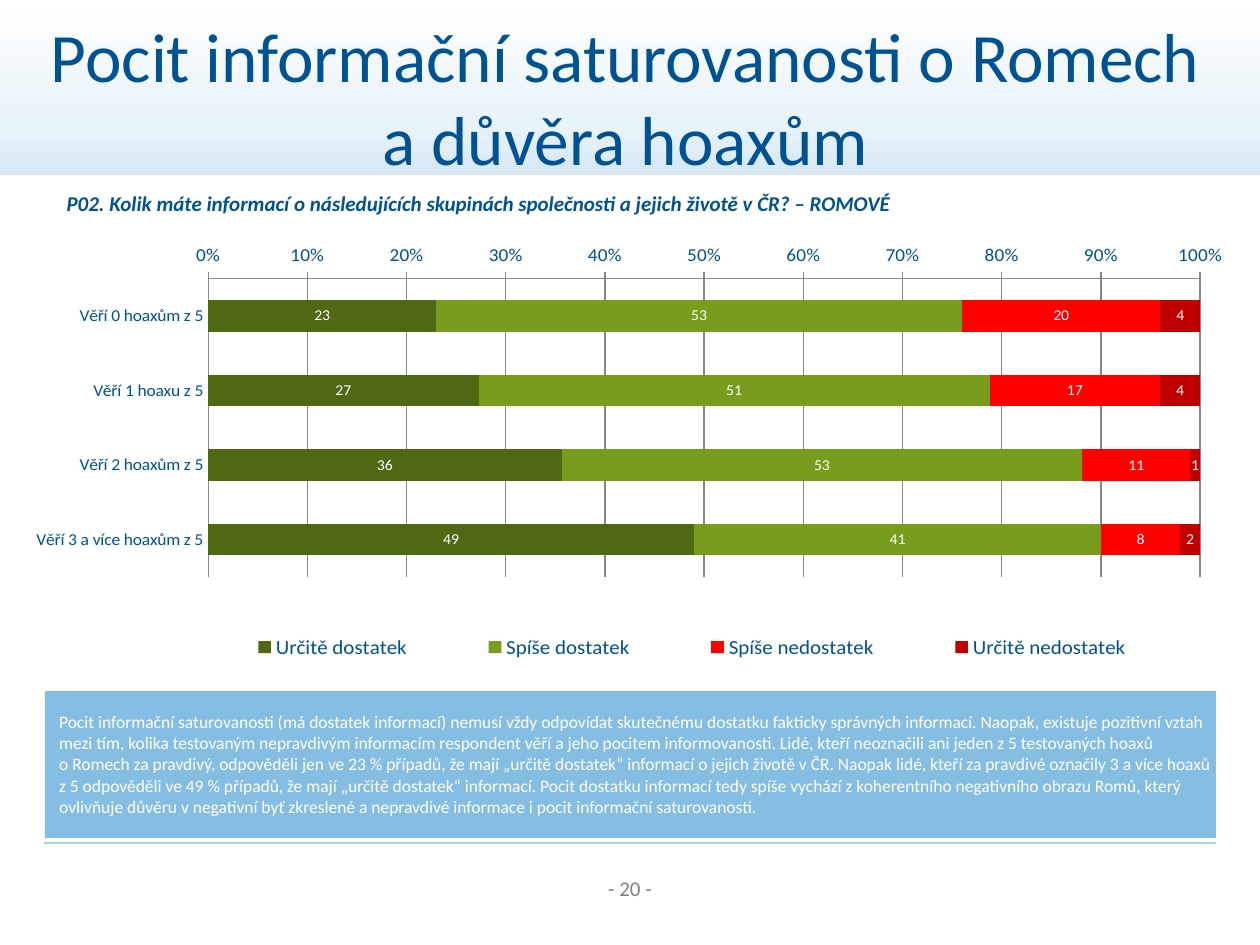
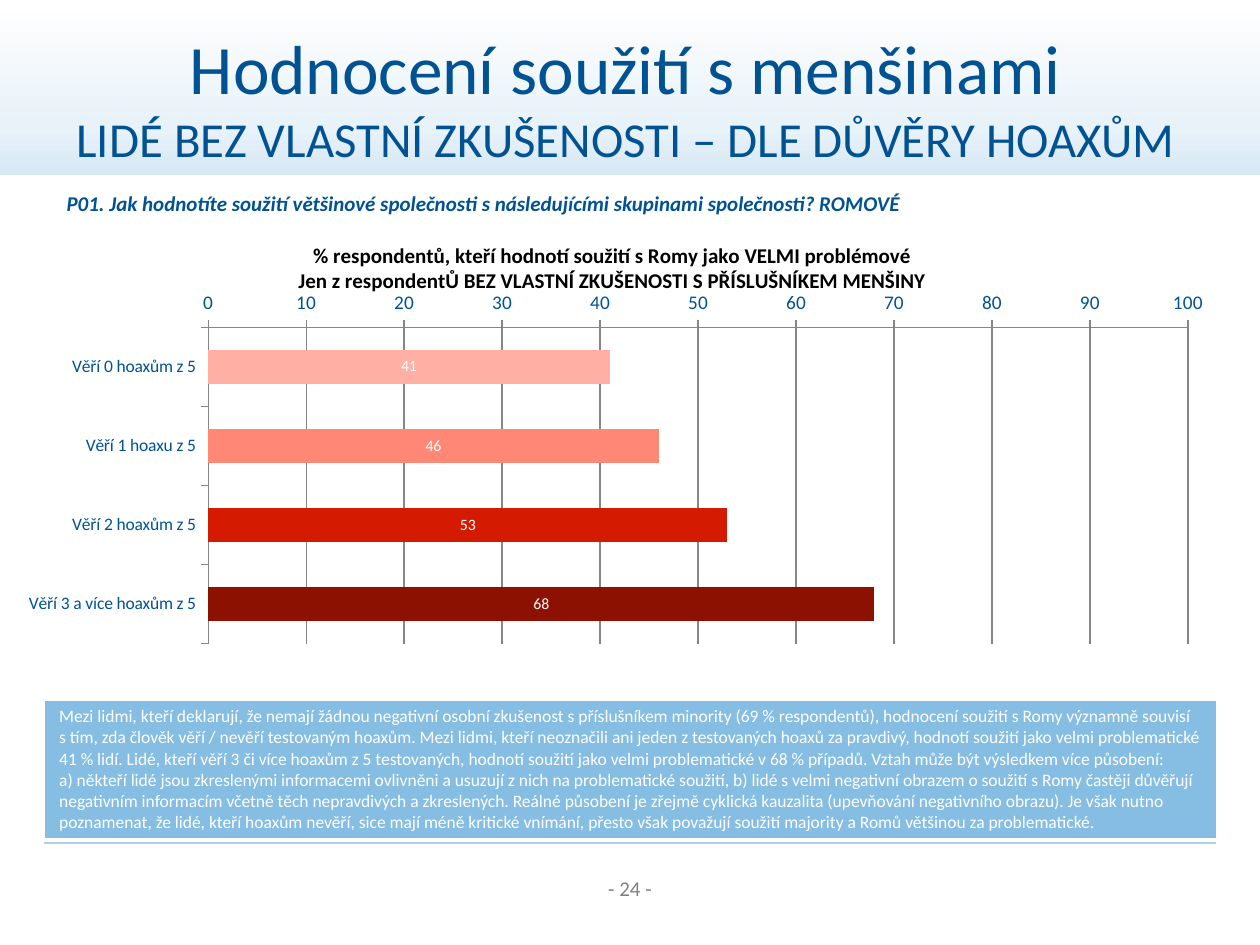
from copy import deepcopy
from dataclasses import dataclass

from pptx import Presentation
from pptx.chart.chart import Chart
from pptx.chart.data import CategoryChartData
from pptx.dml.color import RGBColor
from pptx.enum.chart import (
    XL_AXIS_CROSSES as Crosses,
    XL_CHART_TYPE as ChartType,
    XL_LABEL_POSITION as LabelPosition,
    XL_LEGEND_POSITION as LegendPosition,
    XL_TICK_MARK as TickMark,
)
from pptx.enum.shapes import MSO_CONNECTOR as Connector, MSO_SHAPE as Shape
from pptx.enum.text import MSO_ANCHOR as Anchor, MSO_AUTO_SIZE as AutoSize, PP_ALIGN as Align
from pptx.oxml import parse_xml
from pptx.oxml.ns import nsdecls, qn
from pptx.slide import Slide
from pptx.util import Inches, Pt

# Shared style
FONT = "Calibri"
BLUE, WHITE, BLACK, GREY = "005293", "FFFFFF", "000000", "808080"
NOTE_FILL, RULE, GRID = "86BDE2", "AFCFEA", "868686"
BAND_STOPS = [(0, "FFFFFF"), (0.73, "E8F2F9"), (1, "D7E7F4")]
BELIEF_LEVELS = ["Věří 0 hoaxům z 5", "Věří 1 hoaxu z 5", "Věří 2 hoaxům z 5", "Věří 3 a více hoaxům z 5"]


@dataclass
class Line:
    text: str
    size: float = 39.6


@dataclass
class Answer:
    name: str
    values: list[int]
    color: str


@dataclass
class BarChart:
    kind: ChartType
    top: float
    height: float
    plot_area: tuple[float, float, float, float]
    answers: list[Answer]
    category_tick: TickMark
    axis_format: str
    axis_step: float
    axis_max: float | None = None
    title: str = ""
    legend_area: tuple[float, float, float, float] | None = None
    point_colors: tuple[str, ...] = ()


@dataclass
class Page:
    number: int
    title: list[Line]
    question: str
    chart: BarChart
    note: list[str]
    note_top: float


PAGES = [
    Page(
        20,
        [Line("Pocit informační saturovanosti o Romech a důvěra hoaxům")],
        "P02. Kolik máte informací o následujících skupinách společnosti a jejich životě v ČR? – ROMOVÉ",
        BarChart(
            ChartType.BAR_STACKED_100, 1.94, 3.46, (0.17, 0.03, 0.81, 0.72),
            [
                Answer("Určitě dostatek", [23, 27, 36, 49], "506814"),
                Answer("Spíše dostatek", [53, 51, 53, 41], "789D1D"),
                Answer("Spíše nedostatek", [20, 17, 11, 8], "FF0000"),
                Answer("Určitě nedostatek", [4, 4, 1, 2], "C00000"),
            ],
            TickMark.NONE, "0%", 0.1, legend_area=(0.15, 0.87, 0.83, 0.1),
        ),
        [
            "Pocit informační saturovanosti (má dostatek informací) nemusí vždy odpovídat skutečnému dostatku "
            "fakticky správných informací. Naopak, existuje pozitivní vztah mezi tím, kolika testovaným "
            "nepravdivým informacím respondent věří a jeho pocitem informovanosti. Lidé, kteří neoznačili ani "
            "jeden z 5 testovaných hoaxů",
            "o Romech za pravdivý, odpověděli jen ve 23 % případů, že mají „určitě dostatek“ informací o jejich "
            "životě v ČR. Naopak lidé, kteří za pravdivé označily 3 a více hoaxů z 5 odpověděli ve 49 % případů, "
            "že mají „určitě dostatek“ informací. Pocit dostatku informací tedy spíše vychází z koherentního "
            "negativního obrazu Romů, který ovlivňuje důvěru v negativní byť zkreslené a nepravdivé informace "
            "i pocit informační saturovanosti.",
        ],
        5.48,
    ),
    Page(
        24,
        [Line("Hodnocení soužití s menšinami"), Line("LIDÉ BEZ VLASTNÍ ZKUŠENOSTI – DLE DŮVĚRY HOAXŮM", 27.9)],
        "P01. Jak hodnotíte soužití většinové společnosti s následujícími skupinami společnosti? ROMOVÉ",
        BarChart(
            ChartType.BAR_CLUSTERED, 1.76, 3.64, (0.17, 0.23, 0.8, 0.69),
            [Answer("Velmi problémové", [41, 46, 53, 68], "506814")],
            TickMark.OUTSIDE, "0", 10, axis_max=100,
            title="% respondentů, kteří hodnotí soužití s Romy jako VELMI problémové\n"
            "Jen z respondentŮ BEZ VLASTNÍ ZKUŠENOSTI S PŘÍSLUŠNÍKEM MENŠINY",
            point_colors=("FFAFA4", "FF8776", "D41A00", "8D1100"),
        ),
        [
            "Mezi lidmi, kteří deklarují, že nemají žádnou negativní osobní zkušenost s příslušníkem minority "
            "(69 % respondentů), hodnocení soužití s Romy významně souvisí",
            "s tím, zda člověk věří / nevěří testovaným hoaxům. Mezi lidmi, kteří neoznačili ani jeden "
            "z testovaných hoaxů za pravdivý, hodnotí soužití jako velmi problematické 41 % lidí. Lidé, kteří "
            "věří 3 či více hoaxům z 5 testovaných, hodnotí soužití jako velmi problematické v 68 % případů. "
            "Vztah může být výsledkem více působení:",
            "a) někteří lidé jsou zkreslenými informacemi ovlivněni a usuzují z nich na problematické soužití, "
            "b) lidé s velmi negativní obrazem o soužití s Romy častěji důvěřují negativním informacím včetně "
            "těch nepravdivých a zkreslených. Reálné působení je zřejmě cyklická kauzalita (upevňování "
            "negativního obrazu). Je však nutno poznamenat, že lidé, kteří hoaxům nevěří, sice mají méně "
            "kritické vnímání, přesto však považují soužití majority a Romů většinou za problematické.",
        ],
        5.56,
    ),
]


def rgb(color: str) -> RGBColor:
    return RGBColor.from_string(color)


def format_font(font, size: float, color: str, bold: bool = False, italic: bool = False) -> None:
    font.name, font.size, font.bold, font.italic = FONT, Pt(size), bold, italic
    font.color.rgb = rgb(color)


def write_text(para, text: str, align: Align = Align.LEFT, **style) -> None:
    """Fill a paragraph; a newline becomes a line break of the same size."""
    para.alignment = align
    span = None
    for part in text.split("\n"):
        if span is not None:
            para._p.add_br().append(deepcopy(span._r.rPr))
        span = para.add_run()
        span.text = part
        format_font(span.font, **style)


def add_text_box(slide: Slide, left: float, top: float, width: float, text: str, **style) -> None:
    box = slide.shapes.add_textbox(Inches(left), Inches(top), Inches(width), Inches(0.3))
    box.text_frame.word_wrap = True
    write_text(box.text_frame.paragraphs[0], text, **style)


# Band, footer rule and page number
def add_frame(slide: Slide, number: int) -> None:
    band = slide.shapes.add_shape(Shape.RECTANGLE, 0, 0, Inches(10), Inches(1.39))
    band.shadow.inherit = False
    band.line.fill.background()
    band.fill.gradient()
    band.fill.gradient_angle = 270
    last_stop = band._element.spPr.findall(".//" + qn("a:gs"))[-1]
    last_stop.addnext(deepcopy(last_stop))
    for stop, (position, color) in zip(band.fill.gradient_stops, BAND_STOPS):
        stop.position = position
        stop.color.rgb = rgb(color)

    rule = slide.shapes.add_connector(Connector.STRAIGHT, Inches(0.35), Inches(6.69), Inches(9.65), Inches(6.69))
    rule.line.color.rgb = rgb(RULE)
    rule.line.width = Pt(0.75)
    rule._element.spPr.append(parse_xml(f"<a:effectLst {nsdecls('a')}/>"))
    add_text_box(slide, 4.37, 6.9, 1.26, f"- {number} -", align=Align.CENTER, size=12, color=GREY)


def add_title(slide: Slide, lines: list[Line]) -> None:
    title = slide.shapes.title
    slide.shapes._spTree.append(title._element)  # bring in front of the band
    title.left, title.top, title.width, title.height = map(Inches, (0.2, 0.14, 9.53, 1.25))
    frame = title.text_frame
    frame.word_wrap, frame.auto_size, frame.vertical_anchor = True, AutoSize.NONE, Anchor.MIDDLE
    for index, line in enumerate(lines):
        para = frame.add_paragraph() if index else frame.paragraphs[0]
        write_text(para, line.text, Align.CENTER, size=line.size, color=BLUE)


def add_note(slide: Slide, lines: list[str], top: float) -> None:
    height = Inches(6.66 - top)
    table = slide.shapes.add_table(1, 1, Inches(0.35), Inches(top), Inches(9.31), height).table
    table.first_row = table.horz_banding = False
    cell = table.cell(0, 0)
    cell.fill.solid()
    cell.fill.fore_color.rgb = rgb(NOTE_FILL)
    cell.vertical_anchor = Anchor.MIDDLE
    cell.margin_left = Inches(0.12)
    cell.margin_top = cell.margin_right = cell.margin_bottom = 0
    write_text(cell.text_frame.paragraphs[0], "\n".join(lines), size=10, color=WHITE)


# Charts
def make_layout(area: tuple[float, float, float, float], target: str = ""):
    sizes = "".join(f'<c:{tag} val="{value}"/>' for tag, value in zip("xywh", area))
    return parse_xml(
        f"<c:layout {nsdecls('c')}><c:manualLayout>{target}"
        f'<c:xMode val="edge"/><c:yMode val="edge"/>{sizes}</c:manualLayout></c:layout>'
    )


def format_axes(chart: Chart, bars: BarChart) -> None:
    category, value = chart.category_axis, chart.value_axis
    category.reverse_order = True
    category.crosses = Crosses.MAXIMUM
    category.major_tick_mark = bars.category_tick
    value.major_tick_mark = TickMark.OUTSIDE
    value.minimum_scale = 0
    value.major_unit = bars.axis_step
    if bars.axis_max:
        value.maximum_scale = bars.axis_max
    value.tick_labels.number_format = bars.axis_format
    value.tick_labels.number_format_is_linked = False
    value.has_major_gridlines = True
    for axis, size in ((category, 10), (value, 11)):
        format_font(axis.tick_labels.font, size, BLUE)
    for line in (category.format.line, value.format.line, value.major_gridlines.format.line):
        line.color.rgb = rgb(GRID)
        line.width = Pt(0.75)


def add_bar_chart(slide: Slide, bars: BarChart) -> None:
    data = CategoryChartData()
    data.categories = BELIEF_LEVELS
    for answer in bars.answers:
        data.add_series(answer.name, answer.values)
    chart = slide.shapes.add_chart(
        bars.kind, 0, Inches(bars.top), Inches(9.72), Inches(bars.height), data
    ).chart
    format_font(chart.font, 18, BLACK)
    format_axes(chart, bars)

    plot = chart.plots[0]
    plot.vary_by_categories = False
    plot.gap_width = 135
    for series, answer in zip(plot.series, bars.answers):
        series.format.fill.solid()
        series.format.fill.fore_color.rgb = rgb(answer.color)
        for index, color in enumerate(bars.point_colors):
            fill = series.points[index].format.fill
            fill.solid()
            fill.fore_color.rgb = rgb(color)
        labels = series.data_labels
        labels.show_value = True
        labels.number_format, labels.number_format_is_linked = "#,##0", False
        labels.position = LabelPosition.CENTER
        format_font(labels.font, 9, WHITE)

    plot_area = chart._chartSpace.chart.plotArea
    for layout in plot_area.findall(qn("c:layout")):
        plot_area.remove(layout)
    plot_area.insert(0, make_layout(bars.plot_area, '<c:layoutTarget val="inner"/>'))

    chart.has_title = bool(bars.title)
    if bars.title:
        para = chart.chart_title.text_frame.paragraphs[0]
        write_text(para, bars.title, Align.CENTER, size=12, color=BLACK, bold=True)
    chart.has_legend = bars.legend_area is not None
    if bars.legend_area:
        legend = chart.legend
        legend.position = LegendPosition.BOTTOM
        legend.include_in_layout = False
        format_font(legend.font, 12, BLUE)
        for layout in legend._element.findall(qn("c:layout")):
            legend._element.remove(layout)
        legend._element.find(qn("c:legendPos")).addnext(make_layout(bars.legend_area))


def main() -> None:
    deck = Presentation()
    deck.slide_width, deck.slide_height = Inches(10), Inches(7.5)
    for page in PAGES:
        slide = deck.slides.add_slide(deck.slide_layouts[5])
        add_frame(slide, page.number)
        add_title(slide, page.title)
        add_note(slide, page.note, page.note_top)
        add_bar_chart(slide, page.chart)
        add_text_box(slide, 0.43, 1.46, 8.11, page.question, size=12, color=BLUE, bold=True, italic=True)
    deck.save("out.pptx")


if __name__ == "__main__":
    main()
